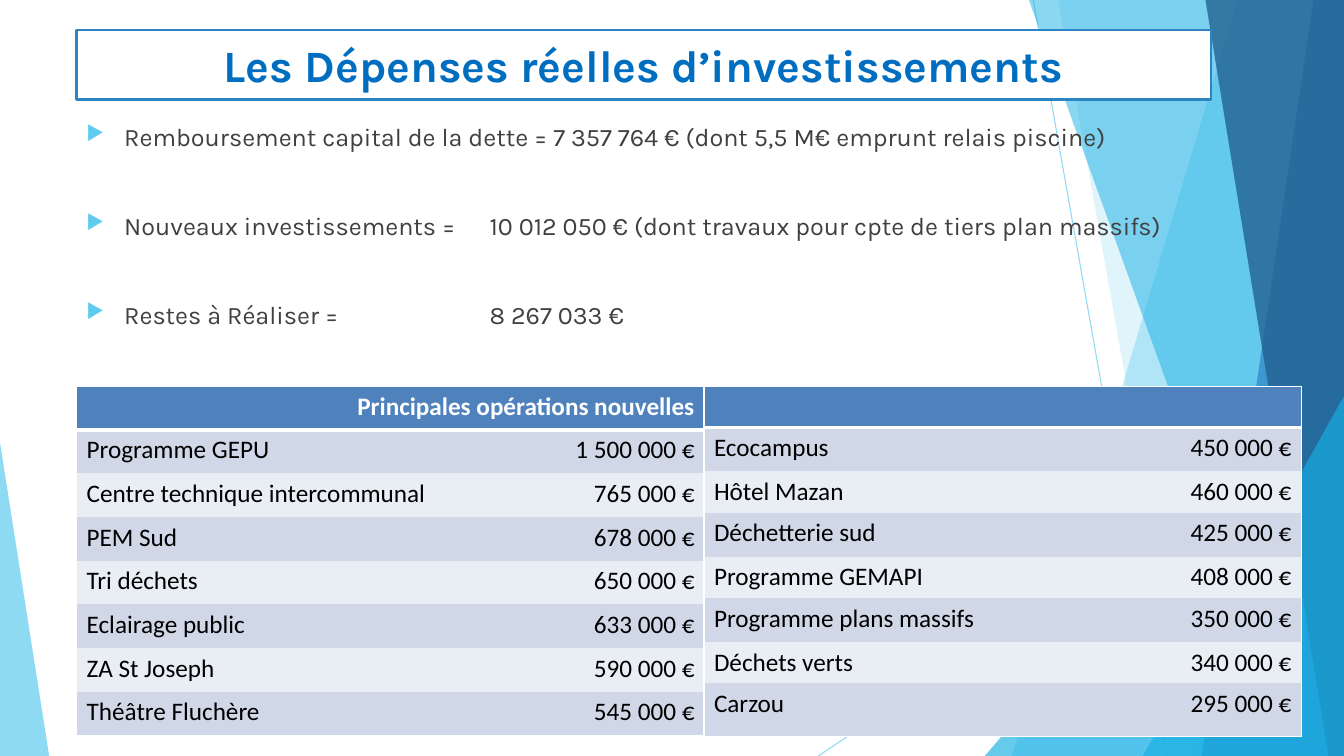
import pptx
import pptx.dml.color
import pptx.enum.shapes
import pptx.enum.text
import pptx.oxml.ns
import pptx.util
from lxml import etree
from pptx.util import Cm, Pt

ALIGN = pptx.enum.text.PP_ALIGN
WIDTH, HEIGHT = 33.87, 19.05
MARGIN, CONTENT_WIDTH = 1.93, 28.6

TITLE = "Les Dépenses réelles d’investissements"
EXPENSES = [
    "Remboursement capital de la dette = 7 357 764 € (dont 5,5 M€ emprunt relais piscine)",
    "Nouveaux investissements =\t10 012 050 € (dont travaux pour cpte de tiers plan massifs)",
    "Restes à Réaliser =\t8 267 033 €",
]
OPERATIONS = [
    {
        "heading": "Principales opérations nouvelles",
        "left": MARGIN,
        "columns": [11.13, 4.7],
        "heights": [1.1] * 8,
        "amounts": [
            ("Programme GEPU", "1 500 000 €"),
            ("Centre technique intercommunal", "765 000 €"),
            ("PEM Sud", "678 000 €"),
            ("Tri déchets", "650 000 €"),
            ("Eclairage public", "633 000 €"),
            ("ZA St Joseph", "590 000 €"),
            ("Théâtre Fluchère", "545 000 €"),
        ],
    },
    {
        "heading": "",
        "left": 17.74,
        "columns": [10.59, 4.47],
        "heights": [1.04, 1.11] * 3 + [1.04, 1.34],
        "amounts": [
            ("Ecocampus", "450 000 €"),
            ("Hôtel Mazan", "460 000 €"),
            ("Déchetterie sud", "425 000 €"),
            ("Programme GEMAPI", "408 000 €"),
            ("Programme plans massifs", "350 000 €"),
            ("Déchets verts", "340 000 €"),
            ("Carzou", "295 000 €"),
        ],
    },
]
TABLE_TOP = 9.73
HEADER_FILL, BAND_FILLS = "4F81BD", ("D0D8E8", "E9EDF4")

RAYS = [((26.04, 0), (29.41, HEIGHT)), ((WIDTH, 10.24), (20.62, HEIGHT))]
RIGHT_EDGE = [(WIDTH, 0), (WIDTH, HEIGHT)]
# Outline, colour, opacity in percent
FACETS = [
    ([(31.19, 0), *RIGHT_EDGE, (25.5, HEIGHT)], "5FCBEF", 36),
    ([(26.67, 0), *RIGHT_EDGE, (30.05, HEIGHT)], "5FCBEF", 20),
    ([(24.82, HEIGHT), (WIDTH, 8.46), (WIDTH, HEIGHT)], "17B0E4", 66),
    ([(25.93, 0), *RIGHT_EDGE, (32.79, HEIGHT)], "17B0E4", 50),
    ([(33.1, 0), *RIGHT_EDGE, (30.28, HEIGHT)], "2E83C3", 70),
    ([(30.38, 0), *RIGHT_EDGE, (33.48, HEIGHT)], "236292", 80),
    ([(28.8, HEIGHT), (WIDTH, 9.98), (WIDTH, HEIGHT)], "17B0E4", 66),
    ([(0, HEIGHT), (0, 11.15), (1.24, HEIGHT)], "5FCBEF", 70),
]


def add_xml(parent, tag, **attributes):
    return etree.SubElement(parent, pptx.oxml.ns.qn(tag), attributes)


def paint(fill, color, opacity=100):
    """Give a fill (of a shape, line or cell) a solid colour."""
    fill.solid()
    fill.fore_color.rgb = pptx.dml.color.RGBColor.from_string(color)
    if opacity < 100:
        solid = fill._xPr.find(pptx.oxml.ns.qn("a:solidFill"))
        add_xml(solid[0], "a:alpha", val=str(opacity * 1000))


def style_text(paragraph, font_name, size, color, bold=False):
    for run in paragraph.runs:
        run.font.name = font_name
        run.font.size = Pt(size)
        run.font.bold = bold
        paint(run.font.fill, color)


def add_backdrop(slide):
    for start, end in RAYS:
        ray = slide.shapes.add_connector(
            pptx.enum.shapes.MSO_CONNECTOR.STRAIGHT, *map(Cm, start + end))
        paint(ray.line.fill, "5FCBEF", 70)
        ray.line.width = Pt(0.75)
        add_xml(ray._element.spPr, "a:effectLst")
    for outline, color, opacity in FACETS:
        start, *others = [(Cm(x), Cm(y)) for x, y in outline]
        builder = slide.shapes.build_freeform(*start)
        builder.add_line_segments(others, close=True)
        facet = builder.convert_to_shape()
        facet.shadow.inherit = False
        paint(facet.fill, color, opacity)
        facet.line.fill.background()


def add_title(slide):
    banner = slide.shapes.add_shape(
        pptx.enum.shapes.MSO_SHAPE.RECTANGLE, Cm(MARGIN), Cm(0.76), Cm(CONTENT_WIDTH), Cm(1.75))
    banner.shadow.inherit = False
    paint(banner.fill, "FFFFFF")
    paint(banner.line.fill, "2E83C3")
    banner.line.width = Pt(1.5)
    banner.text_frame.text = TITLE
    banner.text_frame.vertical_anchor = pptx.enum.text.MSO_ANCHOR.MIDDLE
    heading = banner.text_frame.paragraphs[0]
    heading.alignment = ALIGN.CENTER
    style_text(heading, "Karla", 32, "006EC0", bold=True)


def add_expenses(slide):
    body = slide.shapes.add_textbox(Cm(MARGIN), Cm(2.92), Cm(CONTENT_WIDTH), Cm(6.5)).text_frame
    body.word_wrap = True
    body.text = "\n".join(EXPENSES)
    for index, expense in enumerate(body.paragraphs):
        expense.space_before = Pt(42 if index else 0)
        style_text(expense, "Karla", 18, "404040")
        properties = expense._p.get_or_add_pPr()
        properties.set("marL", str(Cm(0.95)))
        properties.set("indent", str(-Cm(0.95)))
        add_xml(add_xml(properties, "a:buClr"), "a:srgbClr", val="5FCBEF")
        add_xml(properties, "a:buSzPct", val="80000")
        add_xml(properties, "a:buChar", char="▶")
        add_xml(add_xml(properties, "a:tabLst"), "a:tab", pos=str(Cm(10.16)), algn="l")


def set_borders(cell, widths):
    """Draw white borders; widths are points for left, right, top, bottom (0 hides one)."""
    properties = cell._tc.get_or_add_tcPr()
    for position, (side, width) in enumerate(zip("LRTB", widths)):
        border = etree.Element(pptx.oxml.ns.qn(f"a:ln{side}"), {"w": str(Pt(width))})
        if width:
            add_xml(add_xml(border, "a:solidFill"), "a:srgbClr", val="FFFFFF")
        else:
            add_xml(border, "a:noFill")
        properties.insert(position, border)


def add_operations(slide, operations):
    rows = [(operations["heading"], "")] + operations["amounts"]
    columns, heights = operations["columns"], operations["heights"]
    table = slide.shapes.add_table(
        len(rows), len(columns), Cm(operations["left"]), Cm(TABLE_TOP),
        Cm(sum(columns)), Cm(sum(heights))).table
    table.first_row = table.horz_banding = False
    for column, width in zip(table.columns, columns):
        column.width = Cm(width)
    table.cell(0, 0).merge(table.cell(0, 1))
    last = len(rows) - 1
    for r, row in enumerate(rows):
        table.rows[r].height = Cm(heights[r])
        for c, text in enumerate(row):
            cell = table.cell(r, c)
            header = r == 0
            paint(cell.fill, HEADER_FILL if header else BAND_FILLS[(r - 1) % 2])
            top = {0: 1, 1: 3}.get(r, 0)
            bottom = {0: 3, last: 1}.get(r, 0)
            set_borders(cell, (int(c == 0), int(c == 1 or header), top, bottom))
            if text:
                cell.text_frame.text = text
                label = cell.text_frame.paragraphs[0]
                label.alignment = ALIGN.RIGHT if header or c == 1 else ALIGN.LEFT
                style_text(label, "Calibri", 18, "FFFFFF" if header else "000000", header)


def main():
    deck = pptx.Presentation()
    deck.slide_width, deck.slide_height = Cm(WIDTH), Cm(HEIGHT)
    slide = deck.slides.add_slide(deck.slide_layouts[6])
    add_backdrop(slide)
    add_title(slide)
    add_expenses(slide)
    for operations in OPERATIONS:
        add_operations(slide, operations)
    deck.save("out.pptx")


if __name__ == "__main__":
    main()
